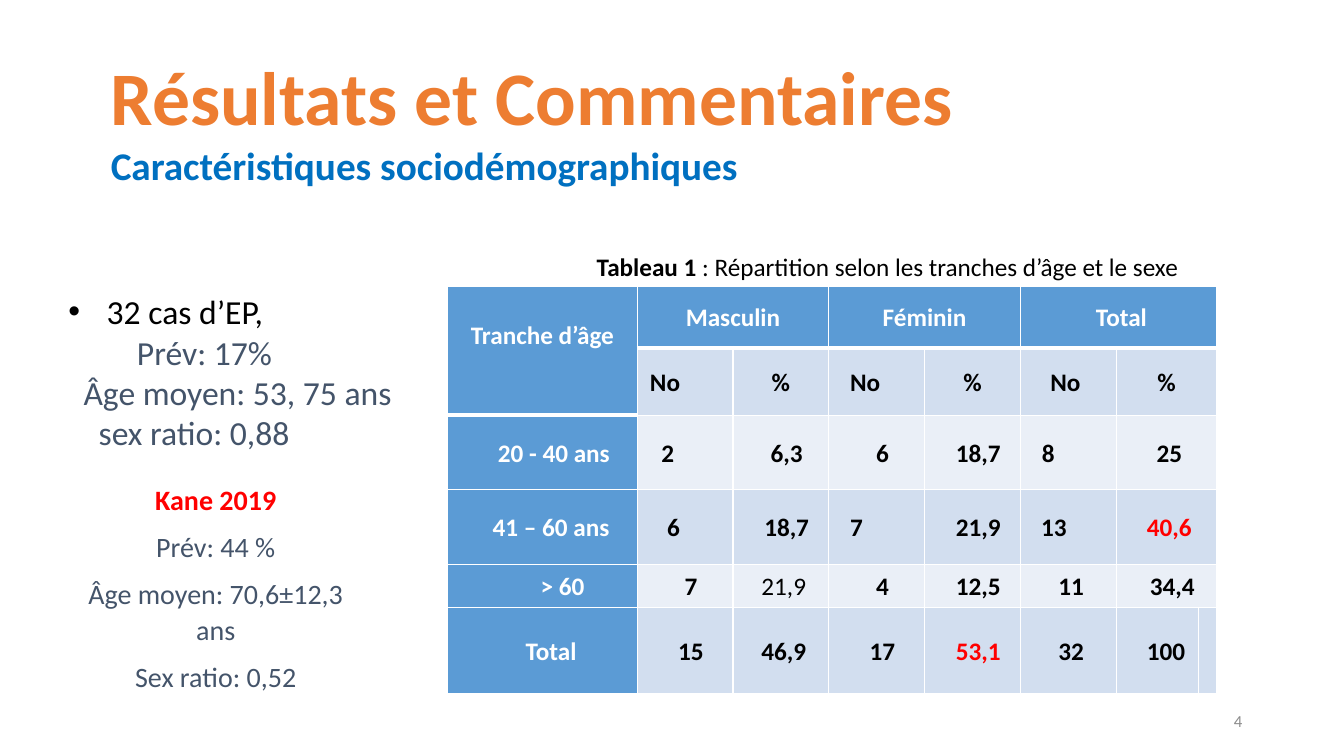
"""Build the results slide with its table of age groups by sex."""
from lxml import etree
from pptx import Presentation, util as u
from pptx.dml.color import RGBColor
from pptx.enum import shapes, text
from pptx.oxml.ns import qn

WHITE = RGBColor(0xFF, 0xFF, 0xFF)
BLACK = RGBColor(0, 0, 0)
RED = RGBColor(0xFF, 0, 0)
ORANGE = RGBColor(0xED, 0x7D, 0x31)
BLUE = RGBColor(0, 0x70, 0xC0)
SLATE = RGBColor(0x44, 0x54, 0x6A)
GREY = RGBColor(0x8C, 0x8C, 0x8C)
HEAD = RGBColor(0x5B, 0x9B, 0xD5)
BANDS = RGBColor(0xD2, 0xDE, 0xEF), RGBColor(0xEA, 0xEF, 0xF7)

MID = text.PP_ALIGN.CENTER
RIGHT = text.PP_ALIGN.RIGHT
LOOSE = {"alignment": MID, "line_spacing": 1.07, "space_after": u.Pt(8)}

TITLE = [
    ([("Résultats et Commentaires", 54, ORANGE, True)], {}),
    ([("Caractéristiques sociodémographiques", 28, BLUE, True)], {}),
]
CASES = [
    ("32 cas d’EP,", BLACK, 0.38),
    ("Prév: 17%", SLATE, 0.68),
    ("Âge moyen: 53, 75 ans", SLATE, 0.15),
    ("sex ratio: 0,88", SLATE, 0.3),
]
STUDY = [
    ([("Kane 2019", 20, RED, True)], LOOSE),
    ([("Prév: 44 %", 20, SLATE, False)], LOOSE),
    ([("Âge moyen: 70,6±12,3 ans", 20, SLATE, False)], LOOSE),
    ([("Sex ratio: 0,52", 20, SLATE, False)], LOOSE),
]
LABEL = [([
    ("Tableau 1", 18, BLACK, True),
    (" : Répartition selon les tranches d’âge et le sexe", 18, BLACK, False),
], {})]
PAGE = [([("4", 12, GREY, False)], {"alignment": RIGHT})]

COLS = [1.88] + [0.95] * 5 + [0.82, 0.14]
ROWS = [0.61, 0.67, 0.74, 0.74, 0.43, 0.85]
GRID = [
    ["Tranche d’âge", "Masculin", "", "Féminin", "", "Total", "", ""],
    ["", "No", "%", "No", "%", "No", "%", ""],
    ["20 - 40 ans", "2", "6,3", "6", "18,7", "8", "25", ""],
    ["41 – 60 ans", "6", "18,7", "7", "21,9", "13", "40,6", ""],
    ["> 60", "7", "21,9", "4", "12,5", "11", "34,4", ""],
    ["Total", "15", "46,9", "17", "53,1", "32", "100", ""],
]
SHIFTS = [
    [0, 0, 0, 0, 0, 1, 0, 0],
    [0, -7, 0, -4, 0, -1, 0, 0],
    [4, -6, 2, 2, 2, -7, 1, 0],
    [3, -4, 2, -7, 2, -5, 1, 0],
    [7, 2, 1, 2, 2, 1, 2, 0],
    [3, 2, 1, 2, 2, 1, 3, 0],
]
SPANS = [(0, 0, 1, 0), (0, 1, 0, 2), (0, 3, 0, 4), (0, 5, 0, 7)]
SPANS += [(row, 6, row, 7) for row in range(1, 5)]
REDS = {(3, 6), (5, 4)}
LIGHT = {(4, 2)}
STEP = 0.057


def apply(item, vals):
    for key, val in vals.items():
        setattr(item, key, val)


def write(par, runs, form):
    apply(par, form)
    for words, size, tint, bold in runs:
        run = par.add_run()
        run.text = words
        apply(run.font, {"name": "Calibri", "size": u.Pt(size), "bold": bold})
        run.font.color.rgb = tint


def fill(frame, pars):
    frame.word_wrap = True
    for num, (runs, form) in enumerate(pars):
        par = frame.add_paragraph() if num else frame.paragraphs[0]
        write(par, runs, form)
    return frame


def place(slide, box, pars):
    return fill(slide.shapes.add_textbox(*map(u.Inches, box)).text_frame, pars)


def indent(par, left, bullet):
    props = par._p.get_or_add_pPr()
    props.set("marL", str(u.Inches(left)))
    props.set("indent", str(u.Inches(-left if bullet else 0)))
    if bullet:
        etree.SubElement(props, qn("a:buFont")).set("typeface", "Arial")
        etree.SubElement(props, qn("a:buChar")).set("char", "•")


def border(cell, thick):
    props = cell._tc.get_or_add_tcPr()
    for side in "LRTB":
        wide = 3 if side in thick else 1
        line = etree.SubElement(props, qn("a:ln" + side), w=str(u.Pt(wide)))
        solid = etree.SubElement(line, qn("a:solidFill"))
        etree.SubElement(solid, qn("a:srgbClr")).set("val", str(WHITE))


def edges(row, col):
    if row == 0 or (row, col) == (1, 0):
        return "B"
    return "T" if row == 1 or (row, col) == (2, 0) else ""


def table(slide):
    box = map(u.Inches, (4.44, 2.84, sum(COLS), sum(ROWS)))
    grid = slide.shapes.add_table(len(ROWS), len(COLS), *box).table
    apply(grid, {"first_row": False, "horz_banding": False})
    for col, wide in zip(grid.columns, COLS):
        col.width = u.Inches(wide)
    for row, high in zip(grid.rows, ROWS):
        row.height = u.Inches(high)
    for top, left, low, right in SPANS:
        grid.cell(top, left).merge(grid.cell(low, right))
    for row, line in enumerate(GRID):
        for col, words in enumerate(line):
            cell, spot = grid.cell(row, col), (row, col)
            shift = SHIFTS[row][col] * STEP
            apply(cell, {
                "vertical_anchor": text.MSO_ANCHOR.MIDDLE,
                "margin_left": u.Inches(0.07 + max(shift, 0)),
                "margin_right": u.Inches(0.07 + max(-shift, 0)),
                "margin_top": 0,
                "margin_bottom": u.Inches(0.32 if spot == (0, 0) else 0),
            })
            border(cell, edges(row, col))
            head = row == 0 or col == 0
            cell.fill.solid()
            cell.fill.fore_color.rgb = HEAD if head else BANDS[(row + 1) % 2]
            if words:
                tint = WHITE if head else RED if spot in REDS else BLACK
                runs = [(words, 18, tint, spot not in LIGHT)]
                write(cell.text_frame.paragraphs[0], runs,
                      {"alignment": MID, "line_spacing": 1.07})


def main():
    deck = Presentation()
    apply(deck, {"slide_width": u.Inches(13.33), "slide_height": u.Inches(7.5)})
    slide = deck.slides.add_slide(deck.slide_layouts[6])
    cases = [([(words, 24, tint, False)], {}) for words, tint, _ in CASES]
    frame = place(slide, (0.58, 2.84, 3.45, 1.72), cases)
    for num, (par, case) in enumerate(zip(frame.paragraphs, CASES)):
        indent(par, case[2], num == 0)
    place(slide, (1, 0.45, 9.12, 1.48), TITLE)
    table(slide)
    box = map(u.Inches, (5.82, 2.44, 6.44, 0.4))
    label = slide.shapes.add_shape(shapes.MSO_SHAPE.RECTANGLE, *box)
    label.shadow.inherit = False
    label.fill.solid()
    label.fill.fore_color.rgb = WHITE
    label.line.fill.background()
    label.text_frame.vertical_anchor = text.MSO_ANCHOR.TOP
    LABEL[0][1]["alignment"] = text.PP_ALIGN.LEFT
    fill(label.text_frame, LABEL)
    page = place(slide, (9.42, 6.95, 3, 0.4), PAGE)
    page.vertical_anchor = text.MSO_ANCHOR.MIDDLE
    place(slide, (0.58, 4.71, 3.12, 2.65), STUDY)
    deck.save("out.pptx")


if __name__ == "__main__":
    main()
